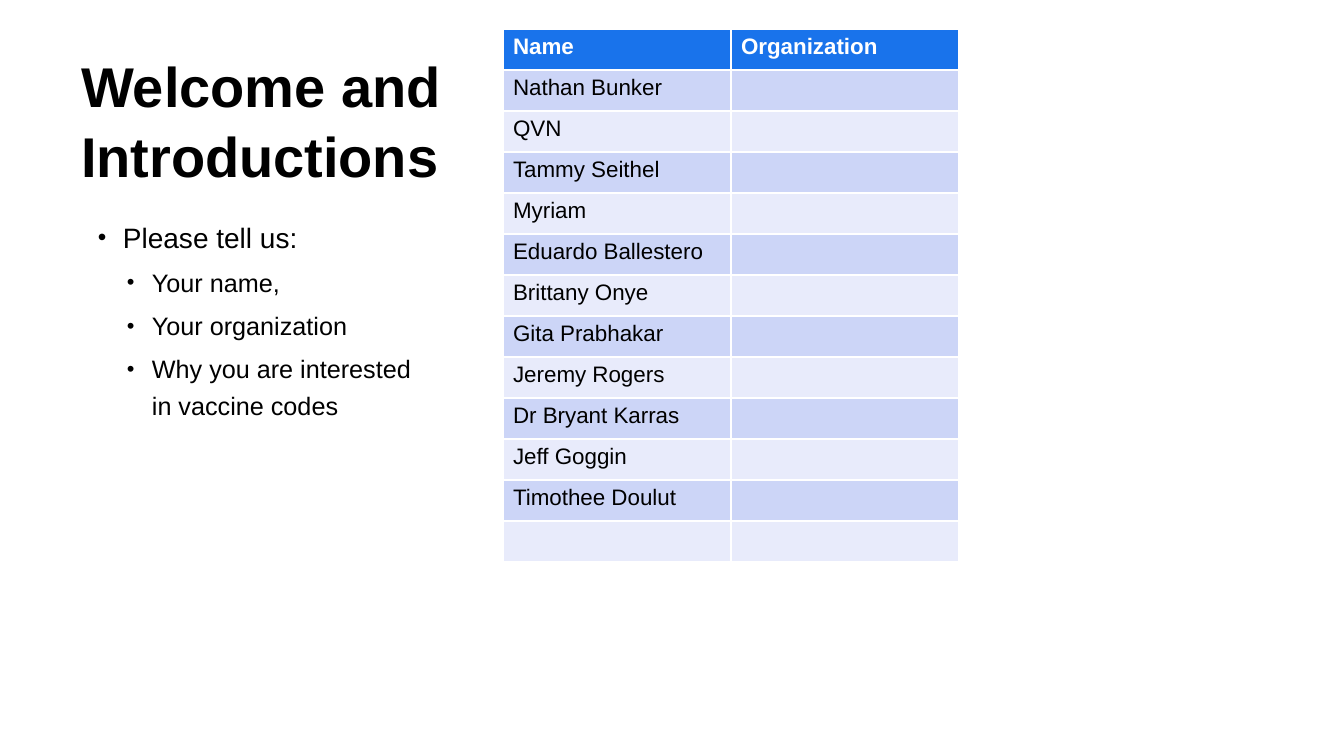
"""Build the welcome slide with its prompts and the table of attendees."""
from lxml.etree import SubElement
from pptx import Presentation
from pptx.dml.color import RGBColor
from pptx.enum.text import MSO_ANCHOR, MSO_AUTO_SIZE, PP_ALIGN
from pptx.oxml.ns import qn
from pptx.util import Pt

PX = 914400 / 100.8
FONT = "Arial"
BLACK = RGBColor(0x00, 0x00, 0x00)
WHITE = RGBColor(0xFF, 0xFF, 0xFF)
BLUE = RGBColor(0x19, 0x73, 0xEB)
BANDS = (RGBColor(0xCC, 0xD5, 0xF7), RGBColor(0xE8, 0xEB, 0xFB))

HEADINGS = ("Name", "Organization")
NAMES = (
    "Nathan Bunker", "QVN", "Tammy Seithel", "Myriam", "Eduardo Ballestero",
    "Brittany Onye", "Gita Prabhakar", "Jeremy Rogers", "Dr Bryant Karras",
    "Jeff Goggin", "Timothee Doulut", "",
)
REQUEST = "Please tell us:"
DETAILS = ("Your name,", "Your organization", "Why you are interested in vaccine codes")


def px(length):
    """Turn pixels into EMU."""
    return round(length * PX)


def write(paragraph, text, size, color=BLACK, bold=False, spacing=None, before=0):
    """Put formatted text into a paragraph."""
    paragraph.alignment = PP_ALIGN.LEFT
    paragraph.space_before = Pt(before)
    if spacing:
        paragraph.line_spacing = spacing
    run = paragraph.add_run()
    run.text = text
    font = run.font
    font.name, font.size, font.bold = FONT, Pt(size), bold
    font.color.rgb = color


def add_bullet(paragraph, level, indent):
    """Give a paragraph a hanging round bullet."""
    paragraph.level = level
    properties = paragraph._p.get_or_add_pPr()
    properties.set("marL", str(px(indent)))
    properties.set("indent", str(px(-25)))
    SubElement(properties, qn("a:buSzPct"), val="87000")
    SubElement(properties, qn("a:buFont"), typeface=FONT)
    SubElement(properties, qn("a:buChar"), char="•")


def place_title(slide, text, left, top, width, height):
    """Position the title placeholder and fill it."""
    title = slide.shapes.title
    title.left, title.top, title.width, title.height = map(px, (left, top, width, height))
    frame = title.text_frame
    frame.word_wrap = True
    frame.auto_size = MSO_AUTO_SIZE.NONE
    frame.vertical_anchor = MSO_ANCHOR.TOP
    frame.margin_top = px(9)
    write(frame.paragraphs[0], text, 40, bold=True, spacing=1.04)


def add_prompts(slide, left, top, width, height):
    """Add the request and its indented details."""
    frame = slide.shapes.add_textbox(*map(px, (left, top, width, height))).text_frame
    frame.word_wrap = True
    request = frame.paragraphs[0]
    add_bullet(request, 0, 25)
    write(request, REQUEST, 20, spacing=1.2)
    for detail in DETAILS:
        paragraph = frame.add_paragraph()
        add_bullet(paragraph, 1, 54)
        write(paragraph, detail, 18, spacing=1.2, before=5)


def fill_cell(cell, text, fill, **text_format):
    """Colour a cell and write its text, if any."""
    cell.fill.solid()
    cell.fill.fore_color.rgb = fill
    if text:
        write(cell.text_frame.paragraphs[0], text, 16, **text_format)


def add_attendees(slide, left, top, column_width, row_height):
    """Add the banded table of attendees."""
    rows, columns = len(NAMES) + 1, len(HEADINGS)
    size = (column_width * columns, row_height * rows)
    table = slide.shapes.add_table(rows, columns, *map(px, (left, top, *size))).table
    for column, heading in enumerate(HEADINGS):
        fill_cell(table.cell(0, column), heading, BLUE, color=WHITE, bold=True)
    for row, name in enumerate(NAMES, start=1):
        band = BANDS[(row - 1) % 2]
        fill_cell(table.cell(row, 0), name, band)
        fill_cell(table.cell(row, 1), "", band)


def main():
    """Build and save the presentation."""
    presentation = Presentation()
    presentation.slide_width, presentation.slide_height = px(1344), px(756)
    slide = presentation.slides.add_slide(presentation.slide_layouts[5])
    place_title(slide, "Welcome and Introductions", 71, 40, 457, 175)
    add_prompts(slide, 88, 209, 350, 393)
    add_attendees(slide, 503, 29, 228, 41)
    presentation.save("out.pptx")


if __name__ == "__main__":
    main()
